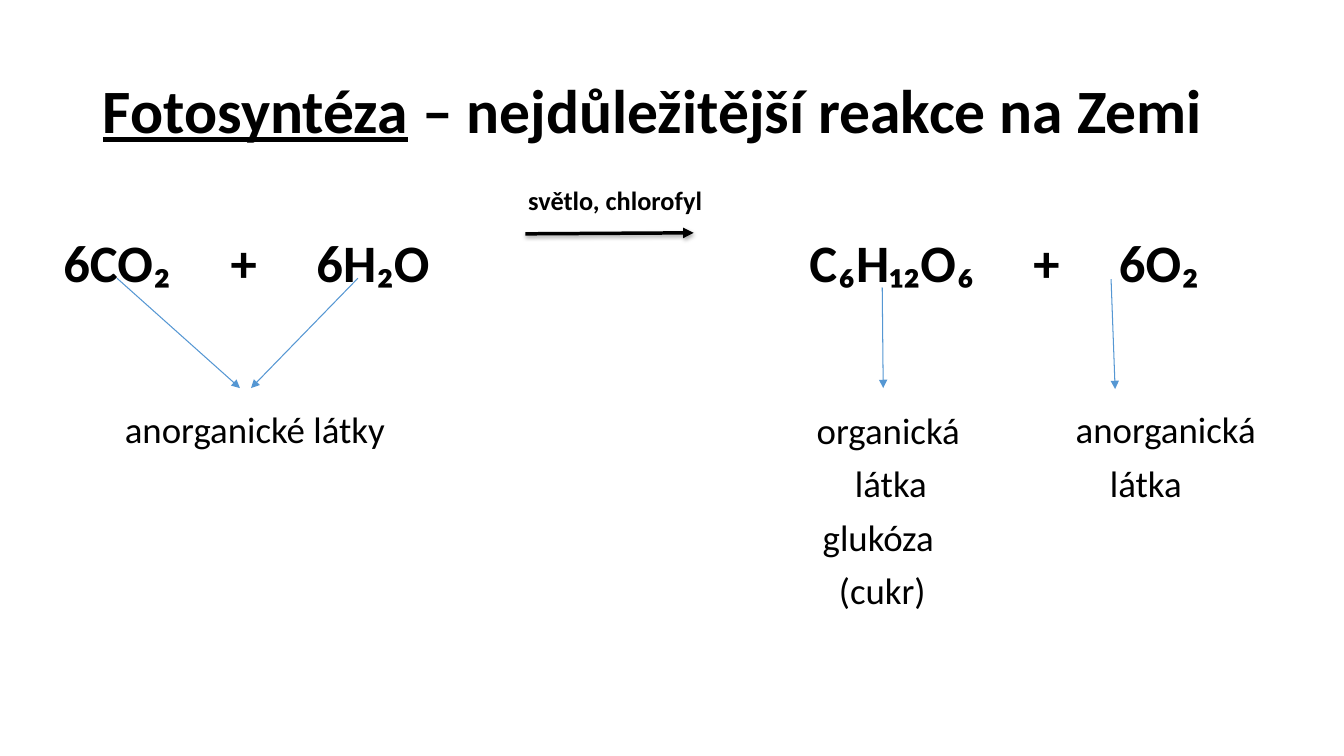
from lxml import etree
from pptx import Presentation
from pptx.dml.color import RGBColor
from pptx.enum.shapes import MSO_CONNECTOR
from pptx.enum.text import MSO_ANCHOR, MSO_AUTO_SIZE, PP_ALIGN
from pptx.oxml.ns import qn
from pptx.util import Inches, Pt

STRAIGHT = MSO_CONNECTOR.STRAIGHT
TOP, MIDDLE = MSO_ANCHOR.TOP, MSO_ANCHOR.MIDDLE
LEFT = PP_ALIGN.LEFT
NO_AUTOFIT = MSO_AUTO_SIZE.NONE
FONT = "Calibri"
BLACK, BLUE = "000000", "5597D3"
EQUATION_SIZE, CONDITION_SIZE, DESCRIPTION_SIZE = 37.6, 18.8, 26.3

# Terms of the equation: (left, width, text)
EQUATION_TERMS = [
    (0.53, 1.5, "6CO₂"), (2.19, 0.6, "+"), (3.04, 1.5, "6H₂O"),
    (7.93, 2, "C₆H₁₂O₆"), (10.15, 0.6, "+"), (11, 1.2, "6O₂"),
]

# Lines of each description: (indent, text)
REACTANTS = [(0, "anorganické látky")]
GLUCOSE = [(0, "organická"), (0.38, "látka"), (0.06, "glukóza"), (0.22, "(cukr)")]
OXYGEN = [(0, "anorganická"), (0.34, "látka")]

# Arrows from each substance to its description: (x1, y1, x2, y2)
SUBSTANCE_ARROWS = [
    (1.16, 2.76, 2.38, 3.85),
    (3.55, 2.76, 2.49, 3.85),
    (8.75, 2.85, 8.76, 3.85),
    (11.02, 2.77, 11.06, 3.86),
]


def rgb(hex_colour):
    return RGBColor.from_string(hex_colour)


def place(holder, box, anchor):
    holder.left, holder.top, holder.width, holder.height = map(Inches, box)
    frame = holder.text_frame
    frame.word_wrap = True
    frame.auto_size = NO_AUTOFIT
    frame.vertical_anchor = anchor
    return frame


def format_paragraph(paragraph, size, bold, space_before=0):
    paragraph.alignment = LEFT
    paragraph.line_spacing = 0.9
    paragraph.space_before = Pt(space_before)
    font = paragraph.font
    font.name, font.size, font.bold = FONT, Pt(size), bold
    font.color.rgb = rgb(BLACK)


def fill_lines(holder, box, lines, size, bold=False):
    frame = place(holder, box, TOP)
    for index, (indent, text) in enumerate(lines):
        line = frame.add_paragraph() if index else frame.paragraphs[0]
        line.add_run().text = text
        properties = line._p.get_or_add_pPr()
        properties.set("marL", str(Inches(indent)))
        properties.set("indent", "0")
        etree.SubElement(properties, qn("a:buNone"))
        format_paragraph(line, size, bold, 9.8 if index else 0)


def add_label(slide, box, lines, size, bold=False):
    fill_lines(slide.shapes.add_textbox(*map(Inches, box)), box, lines, size, bold)


def add_title(slide, box):
    heading = place(slide.shapes.title, box, MIDDLE).paragraphs[0]
    term = heading.add_run()
    term.text = "Fotosyntéza"
    term.font.underline = True
    heading.add_run().text = " – nejdůležitější reakce na Zemi"
    format_paragraph(heading, 44, True)


def add_equation(slide, box):
    left, top, _, height = box
    for offset, width, text in EQUATION_TERMS:
        add_label(slide, (left + offset, top, width, height), [(0, text)],
                  EQUATION_SIZE, bold=True)
    # Reaction arrow under its conditions
    add_label(slide, (left + 5.14, top - 0.49, 2.2, 0.4), [(0, "světlo, chlorofyl")],
              CONDITION_SIZE, bold=True)
    add_arrow(slide, (left + 5.21, top + 0.02, left + 6.88, top + 0.01), BLACK, 2.5,
              shadow=True)


def add_descriptions(slide, box):
    left, top, _, height = box
    add_label(slide, (left + 1.14, top, 3.2, 0.6), REACTANTS, DESCRIPTION_SIZE)
    fill_lines(slide.placeholders[1], (left + 8, top, 2, height), GLUCOSE,
               DESCRIPTION_SIZE)
    add_label(slide, (left + 10.57, top, 2.3, 1.1), OXYGEN, DESCRIPTION_SIZE)


def add_arrow(slide, ends, colour, width, shadow=False):
    arrow = slide.shapes.add_connector(STRAIGHT, *map(Inches, ends))
    arrow.line.color.rgb = rgb(colour)
    arrow.line.width = Pt(width)
    etree.SubElement(arrow.line._get_or_add_ln(), qn("a:tailEnd"), type="triangle")
    effects = etree.SubElement(arrow._element.spPr, qn("a:effectLst"))
    if shadow:
        outer = etree.SubElement(effects, qn("a:outerShdw"), blurRad=str(Pt(3.1)),
                                 dist=str(Pt(1.8)), dir="5400000", rotWithShape="0")
        shade = etree.SubElement(outer, qn("a:srgbClr"), val=BLACK)
        etree.SubElement(shade, qn("a:alpha"), val="35000")


def main():
    presentation = Presentation()
    presentation.slide_width, presentation.slide_height = Inches(13.33), Inches(7.5)
    slide = presentation.slides.add_slide(presentation.slide_layouts[1])

    add_title(slide, (0.92, 0.4, 11.5, 1.45))
    add_equation(slide, (0, 2.3, 13.33, 0.7))
    add_descriptions(slide, (0, 4.04, 13.33, 2.3))
    for ends in SUBSTANCE_ARROWS:
        add_arrow(slide, ends, BLUE, 0.75)

    presentation.save("out.pptx")


if __name__ == "__main__":
    main()
